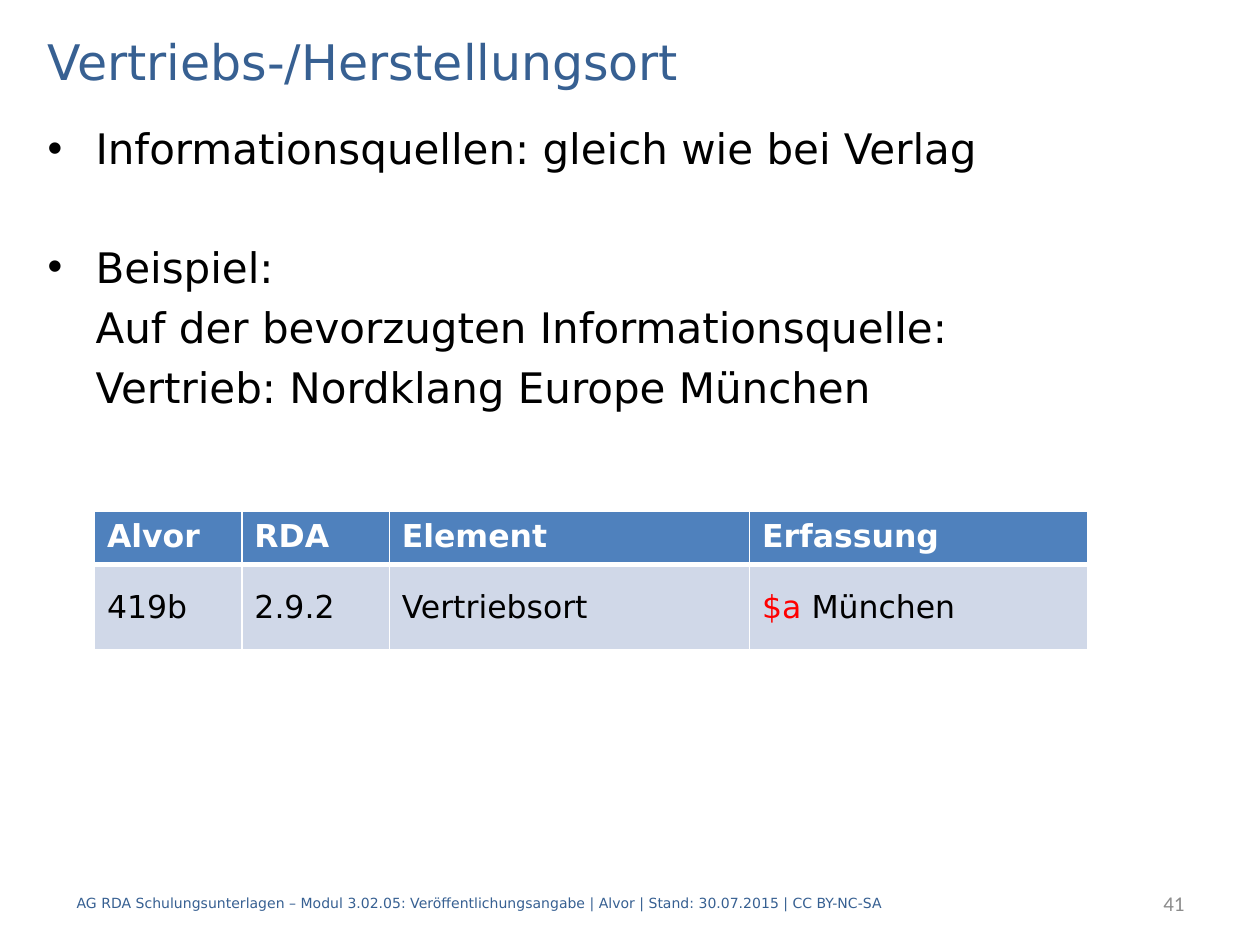
"""Build the slide on place of distribution and manufacture."""
import pptx
import pptx.dml.color
import pptx.enum.text
import pptx.oxml
import pptx.oxml.ns
import pptx.util

Inches, Pt = pptx.util.Inches, pptx.util.Pt
Anchor, Align = pptx.enum.text.MSO_ANCHOR, pptx.enum.text.PP_ALIGN
SANS, BLUE = "DejaVu Sans", "376092"

deck = pptx.Presentation()
deck.slide_width, deck.slide_height = Inches(10), Inches(7.5)
wide, high = deck.slide_width, deck.slide_height
slide = deck.slides.add_slide(deck.slide_layouts[6])


def add_run(para, text, size, color, font=SANS, bold=False):
    run = para.add_run()
    run.text = text
    run.font.size, run.font.name, run.font.bold = Pt(size), font, bold
    run.font.color.rgb = pptx.dml.color.RGBColor.from_string(color)


def add_box(left, top, width, height, anchor=Anchor.MIDDLE):
    box = slide.shapes.add_textbox(
        int(left * wide), int(top * high), int(width * wide), int(height * high))
    frame = box.text_frame
    frame.word_wrap, frame.vertical_anchor = True, anchor
    return frame


title = add_box(0.028, 0.027, 0.945, 0.075)
add_run(title.paragraphs[0], "Vertriebs-/Herstellungsort", 28, BLUE)

body = add_box(0.028, 0.123, 0.945, 0.797, Anchor.TOP)
lines = [
    ("Informationsquellen: gleich wie bei Verlag", True, 5.5),
    ("Beispiel:", True, 39),
    ("Auf der bevorzugten Informationsquelle:", False, 5.5),
    ("Vertrieb: Nordklang Europe München", False, 5.5),
]
for num, (text, dot, gap) in enumerate(lines):
    para = body.add_paragraph() if num else body.paragraphs[0]
    para.space_before = Pt(gap)
    props = para._p.get_or_add_pPr()
    props.set("marL", str(Inches(0.38)))
    props.set("indent", str(Inches(-0.38) if dot else 0))
    if dot:
        font = pptx.oxml.ns.qn("a:buFont")
        props.append(props.makeelement(font, {"typeface": "Arial"}))
        mark = pptx.oxml.ns.qn("a:buChar")
        props.append(props.makeelement(mark, {"char": "•"}))
    add_run(para, text, 24, "000000")

cols, rows = [1.17, 1.17, 2.86, 2.68], [0.4, 0.68]
rows[0] = 0.42
heads = ["Alvor", "RDA", "Element", "Erfassung"]
cells = [
    [[(text, "FFFFFF")] for text in heads],
    [[("419b", "000000")], [("2.9.2", "000000")], [("Vertriebsort", "000000")],
     [("$a", "FF0000"), (" München", "000000")]],
]
fills = ["4F81BD", "D0D8E8"]
edges = [{"L": 1, "R": 1, "T": 1, "B": 3}, {"L": 1, "R": 1, "T": 3, "B": 1}]
grid = slide.shapes.add_table(
    len(rows), len(cols), Inches(0.75), Inches(4.06),
    Inches(sum(cols)), Inches(sum(rows))).table
for col, width in zip(grid.columns, cols):
    col.width = Inches(width)
for row, height in enumerate(rows):
    grid.rows[row].height = Inches(height)
    for col, runs in enumerate(cells[row]):
        cell = grid.cell(row, col)
        cell.vertical_anchor = Anchor.MIDDLE if row else Anchor.TOP
        para = cell.text_frame.paragraphs[0]
        if row:
            para.space_before = para.space_after = Pt(6)
        for text, color in runs:
            add_run(para, text, 18, color, bold=row == 0)
        props = cell._tc.get_or_add_tcPr()
        for side, size in edges[row].items():
            props.append(pptx.oxml.parse_xml(
                f'<a:ln{side} {pptx.oxml.ns.nsdecls("a")} w="{Pt(size)}"><a:solidFill>'
                f'<a:srgbClr val="FFFFFF"/></a:solidFill></a:ln{side}>'))
        cell.fill.solid()
        cell.fill.fore_color.rgb = pptx.dml.color.RGBColor.from_string(fills[row])

page = add_box(0.791, 0.929, 0.159, 0.053).paragraphs[0]
page.alignment = Align.RIGHT
add_run(page, "41", 12, "8C8C8C", "Calibri")

foot = add_box(0.051, 0.929, 0.827, 0.053).paragraphs[0]
add_run(foot, "AG RDA Schulungsunterlagen – Modul 3.02.05: Veröffentlichungsangabe"
        " | Alvor | Stand: 30.07.2015 | CC BY-NC-SA", 8, BLUE)

deck.save("out.pptx")
